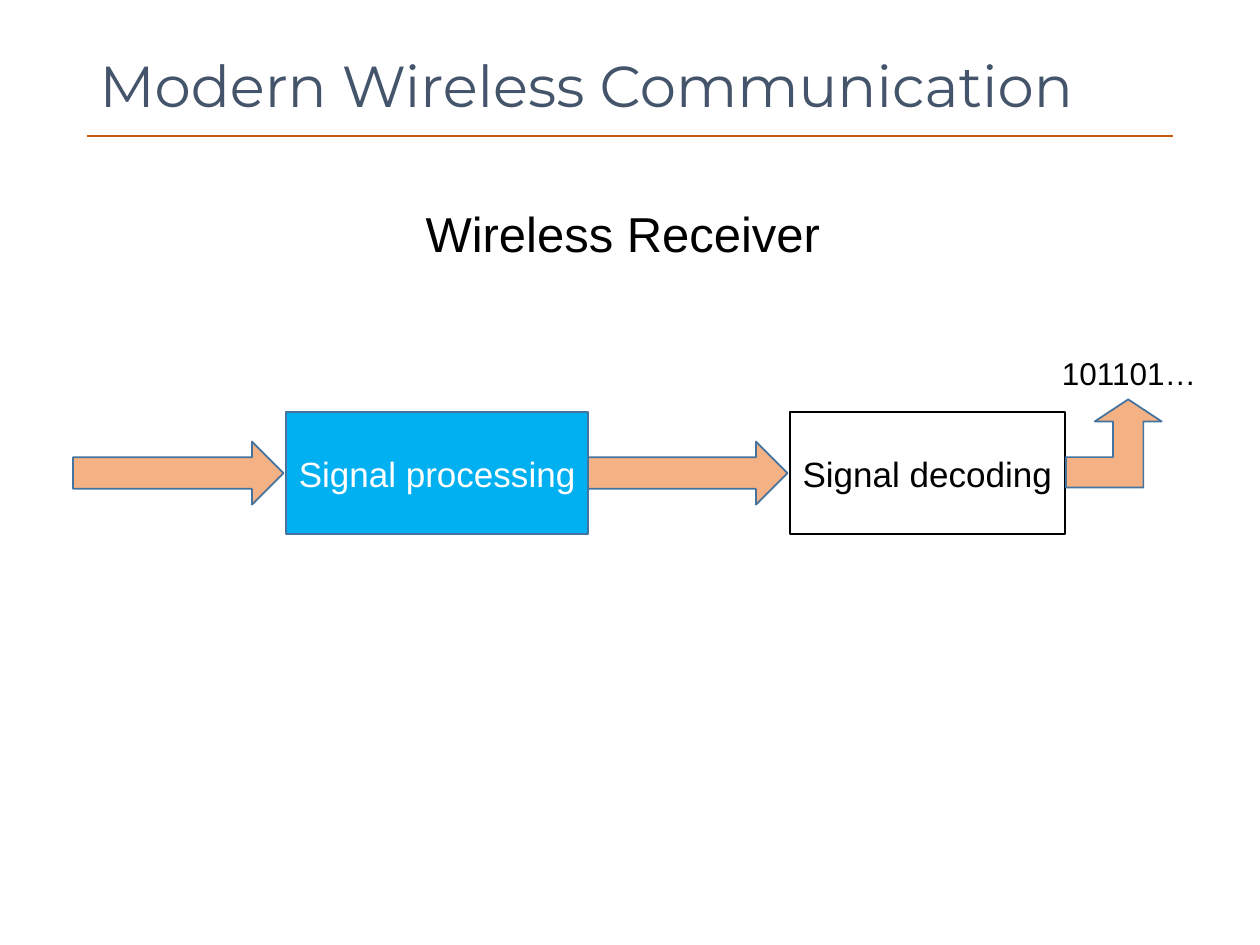
from lxml import etree
from pptx import Presentation
from pptx import util as u
from pptx.dml.color import RGBColor
from pptx.enum import shapes, text
from pptx.oxml import ns

COLORS = {
    "title": "44546A", "rule": "C55A11", "arrow": "F4B183", "edge": "43739E",
    "processing": "00B0F0", "black": "000000", "white": "FFFFFF",
}


def rgb(name):
    """Return the named colour."""
    return RGBColor.from_string(COLORS[name])


def box_of(*lengths):
    """Turn lengths in inches into slide lengths."""
    return [u.Inches(n) for n in lengths]


def write(tf, words, size, color="black", font="Arial", **frame):
    """Write one formatted paragraph and return it."""
    for key, value in {"word_wrap": True, **frame}.items():
        setattr(tf, key, value)
    p = tf.paragraphs[0]
    r = p.add_run()
    r.text = words
    for key, value in {"size": u.Pt(size), "name": font}.items():
        setattr(r.font, key, value)
    r.font.color.rgb = rgb(color)
    return p


def add_shape(s, kind, box, fill=None, line="edge"):
    """Add a flat preset shape with a thin outline."""
    sp = s.shapes.add_shape(kind, *box_of(*box))
    sp.shadow.inherit = False
    if fill:
        sp.fill.solid()
        sp.fill.fore_color.rgb = rgb(fill)
    else:
        sp.fill.background()
    sp.line.color.rgb = rgb(line)
    sp.line.width = u.Pt(1)
    return sp


def add_stage(s, box, words, fill, line, color):
    """Add a labelled processing stage."""
    sp = add_shape(s, shapes.MSO_SHAPE.RECTANGLE, box, fill, line)
    p = write(sp.text_frame, words, 20, color,
              vertical_anchor=text.MSO_ANCHOR.MIDDLE)
    p.alignment = text.PP_ALIGN.CENTER


def add_label(s, box, words, size):
    """Add a text box with one line."""
    tb = s.shapes.add_textbox(*box_of(*box))
    write(tb.text_frame, words, size,
          auto_size=text.MSO_AUTO_SIZE.SHAPE_TO_FIT_TEXT)


def add_header(s, left, top, width, height):
    """Place the title and the rule that crosses its lower part."""
    title = s.shapes.title
    for key, value in zip(("left", "top", "width", "height"),
                          box_of(left, top, width, height)):
        setattr(title, key, value)
    p = write(title.text_frame, "Modern Wireless Communication", 33, "title",
              "Montserrat", vertical_anchor=text.MSO_ANCHOR.MIDDLE,
              auto_size=text.MSO_AUTO_SIZE.NONE)
    p.alignment = text.PP_ALIGN.LEFT
    p.line_spacing = 0.9
    y = top + 0.88
    rule = s.shapes.add_connector(shapes.MSO_CONNECTOR.STRAIGHT,
                                  *box_of(left, y, left + width, y))
    rule.line.color.rgb = rgb("rule")
    rule.line.width = u.Pt(1.5)
    etree.SubElement(rule._element.spPr, ns.qn("a:effectLst"))


def add_receiver(s, left, top, height):
    """Place the two stages, the arrows between them and the output bits."""
    pitch = 4
    first = left + 1.69
    for i in range(2):
        add_shape(s, shapes.MSO_SHAPE.RIGHT_ARROW,
                  (left + i * pitch, top + (height - 0.5) / 2, 1.67, 0.5), "arrow")
    stages = [
        ("Signal processing", 2.4, "processing", "edge", "white"),
        ("Signal decoding", 2.18, None, "black", "black"),
    ]
    for i, (words, width, *colors) in enumerate(stages):
        add_stage(s, (first + i * pitch, top, width, height), words, *colors)
    end = first + pitch + stages[-1][1]
    add_label(s, (end - 0.12, top - 0.51, 1.32, 0.4), "101101…", 18)
    bent = add_shape(s, shapes.MSO_SHAPE.BENT_UP_ARROW,
                     (end + 0.01, top - 0.1, 0.76, 0.7), "arrow")
    for i, value in enumerate((0.345, 0.379, 0.25)):
        bent.adjustments[i] = value


def main():
    """Build the slide and save it."""
    prs = Presentation()
    prs.slide_width, prs.slide_height = box_of(10, 7.5)
    s = prs.slides.add_slide(prs.slide_layouts[5])
    add_header(s, 0.69, 0.2, 8.62, 1.01)
    add_label(s, (3.28, 1.57, 3.44, 0.57), "Wireless Receiver", 28)
    add_receiver(s, 0.58, 3.27, 0.97)
    prs.save("out.pptx")


if __name__ == "__main__":
    main()
